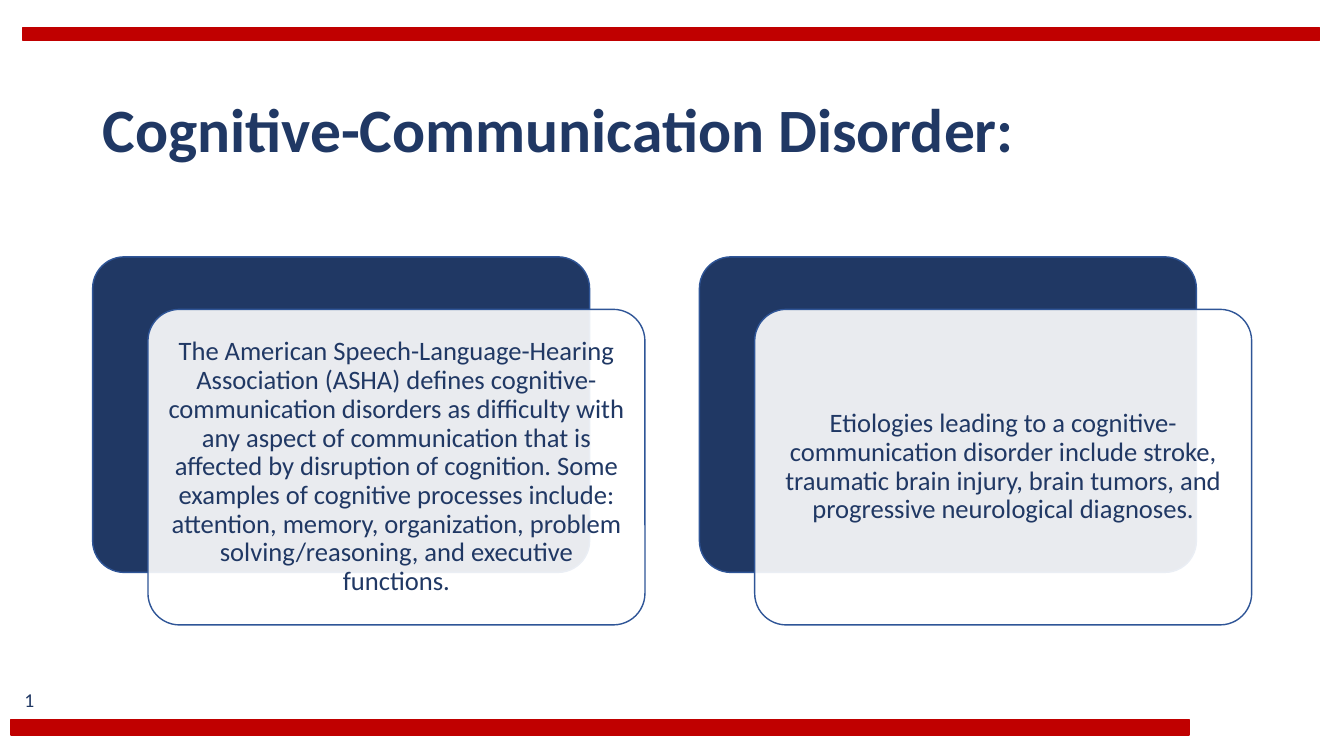
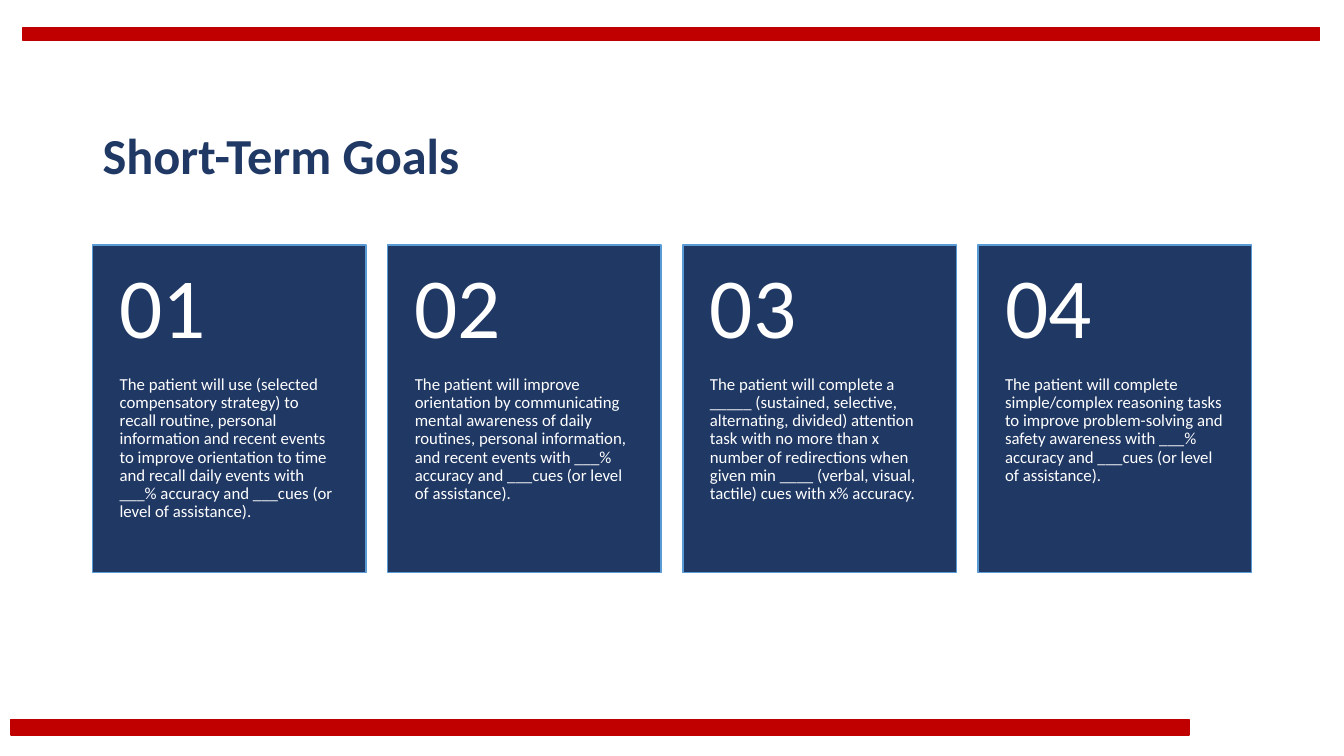
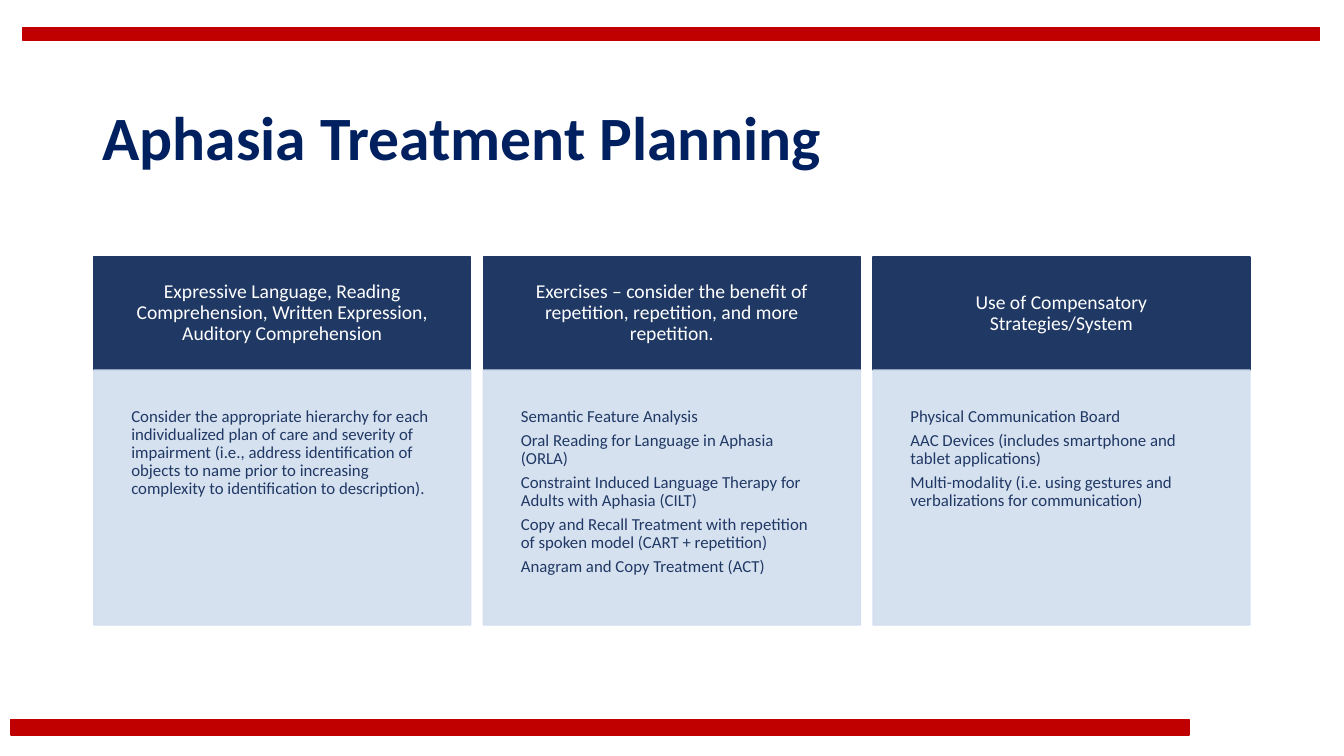
"""Build three slides on cognitive-communication and aphasia care."""
import pptx
import pptx.util
import pptx.dml.color
import pptx.enum.shapes
import pptx.enum.text
import pptx.oxml.ns
import lxml.etree

Pt = pptx.util.Pt
KIND = pptx.enum.shapes.MSO_SHAPE
ALIGN = pptx.enum.text.PP_ALIGN
ANCHOR = pptx.enum.text.MSO_ANCHOR

HUES = {
    "navy": "203864", "ink": "002060", "red": "C00000", "white": "FFFFFF",
    "edge": "2F5597", "sky": "5B9BD5", "pale": "D2DEEF",
}
FONT = "Calibri"
BANDS = [(8, 514, 841.5, 11), (16.5, 19.5, 926, 9.5)]
LEFT = 66.2

FACTS = [
    "The American Speech-Language-Hearing Association (ASHA) defines cognitive- "
    "communication disorders as difficulty with any aspect of communication that is "
    "affected by disruption of cognition. Some examples of cognitive processes include: "
    "attention, memory, organization, problem solving/reasoning, and executive functions.",
    "Etiologies leading to a cognitive-communication disorder include stroke, traumatic "
    "brain injury, brain tumors, and progressive neurological diagnoses.",
]

GOALS = [
    "The patient will use (selected compensatory strategy) to recall routine, personal "
    "information and recent events to improve orientation to time and recall daily events "
    "with ___% accuracy and ___cues (or level of assistance).",
    "The patient will improve orientation by communicating mental awareness of daily "
    "routines, personal information, and recent events with ___% accuracy and ___cues "
    "(or level of assistance).",
    "The patient will complete a _____ (sustained, selective, alternating, divided) "
    "attention task with no more than x number of redirections when given min ____ "
    "(verbal, visual, tactile) cues with x% accuracy.",
    "The patient will complete simple/complex reasoning tasks to improve problem-solving "
    "and safety awareness with ___% accuracy and ___cues (or level of assistance).",
]

PLANS = [
    ("Expressive Language, Reading Comprehension, Written Expression, Auditory Comprehension", [
        "Consider the appropriate hierarchy for each individualized plan of care and "
        "severity of impairment (i.e., address identification of objects to name prior to "
        "increasing complexity to identification to description).",
    ]),
    ("Exercises – consider the benefit of repetition, repetition, and more repetition.", [
        "Semantic Feature Analysis",
        "Oral Reading for Language in Aphasia (ORLA)",
        "Constraint Induced Language Therapy for Adults with Aphasia (CILT)",
        "Copy and Recall Treatment with repetition of spoken model (CART + repetition)",
        "Anagram and Copy Treatment (ACT)",
    ]),
    ("Use of Compensatory Strategies/System", [
        "Physical Communication Board",
        "AAC Devices (includes smartphone and tablet applications)",
        "Multi-modality (i.e. using gestures and verbalizations for communication)",
    ]),
]


def color(name):
    return pptx.dml.color.RGBColor.from_string(HUES[name])


def fade(fill, share):
    for hue in fill.iter(pptx.oxml.ns.qn("a:srgbClr")):
        alpha = lxml.etree.SubElement(hue, pptx.oxml.ns.qn("a:alpha"))
        alpha.set("val", str(share * 1000))


def block(slide, area, fill, line, kind=KIND.RECTANGLE):
    shape = slide.shapes.add_shape(kind, *map(Pt, area))
    shape.shadow.inherit = False
    shape.fill.solid()
    shape.fill.fore_color.rgb = color(fill)
    shape.line.color.rgb = color(line)
    shape.line.width = Pt(1)
    return shape


def write(shape, lines, size, hue, pads, align=ALIGN.LEFT, anchor=ANCHOR.MIDDLE,
          bold=False, lead=0.9):
    frame = shape.text_frame
    frame.word_wrap = True
    frame.vertical_anchor = anchor
    (frame.margin_left, frame.margin_top,
     frame.margin_right, frame.margin_bottom) = map(Pt, pads)
    frame.text = "\n".join(lines)
    for spot, para in enumerate(frame.paragraphs):
        para.alignment = align
        para.line_spacing = lead
        para.space_before = Pt(size * 0.35 if spot else 0)
        for run in para.runs:
            run.font.name = FONT
            run.font.size = Pt(size)
            run.font.bold = bold
            run.font.color.rgb = color(hue)


def label(slide, area, line, size, hue, pads, **style):
    box = slide.shapes.add_textbox(*map(Pt, area))
    write(box, [line], size, hue, pads, **style)


def start(deck, title, top, size=44, hue="navy"):
    slide = deck.slides.add_slide(deck.slide_layouts[6])
    for area in BANDS:
        block(slide, area, "red", "red")
    label(slide, (LEFT, top, 828, 104.4), title, size, hue, (7.2, 3.6, 7.2, 3.6), bold=True)
    return slide


def define(deck):
    slide = start(deck, "Cognitive-Communication Disorder:", 42.5)
    wide, high, top = 355, 225.4, 183.5
    for col, fact in enumerate(FACTS):
        left = LEFT + col * 433.4
        back = block(slide, (left, top, wide, high), "navy", "edge", KIND.ROUNDED_RECTANGLE)
        card = block(slide, (left + 39.5, top + 37.5, wide, high), "white", "edge",
                     KIND.ROUNDED_RECTANGLE)
        back.adjustments[0] = card.adjustments[0] = 0.1
        fade(card.fill._xPr.find(pptx.oxml.ns.qn("a:solidFill")), 90)
        write(card, [fact], 19, "navy", (5.8,) * 4, align=ALIGN.CENTER)
    label(slide, (0, 488, 42, 24.5), "1", 14, "navy", (0, 3.6, 0, 3.6),
          align=ALIGN.CENTER, anchor=ANCHOR.TOP, lead=1.0)


def goals(deck):
    slide = start(deck, "Short-Term Goals", 60.5, 36)
    wide, high, top, head, pad = 195.3, 234, 175, 93.6, 19.3
    for col, goal in enumerate(GOALS):
        left = LEFT + col * 210.8
        card = block(slide, (left, top, wide, high), "navy", "sky")
        write(card, [goal], 12, "white", (pad, head, pad, 26), anchor=ANCHOR.TOP)
        label(slide, (left, top, wide, head), f"{col + 1:02}", 61, "white",
              (pad, 13, pad, 13))


def plan(deck):
    slide = start(deck, "Aphasia Treatment Planning", 48.2, hue="ink")
    wide, top, head, high = 269.3, 183.5, 80.8, 182.2
    for col, (name, items) in enumerate(PLANS):
        left = 67 + col * 278.3
        cap = block(slide, (left, top, wide, head), "navy", "navy")
        write(cap, [name], 14, "white", (21.3,) * 4, align=ALIGN.CENTER)
        body = block(slide, (left, top + head, wide, high), "pale", "pale")
        fade(body.fill._xPr, 90)
        write(body, items, 12, "navy", (26.8,) * 4, anchor=ANCHOR.TOP)


def main():
    deck = pptx.Presentation()
    deck.slide_width, deck.slide_height = Pt(960), Pt(540)
    for make in (define, goals, plan):
        make(deck)
    deck.save("out.pptx")


if __name__ == "__main__":
    main()
